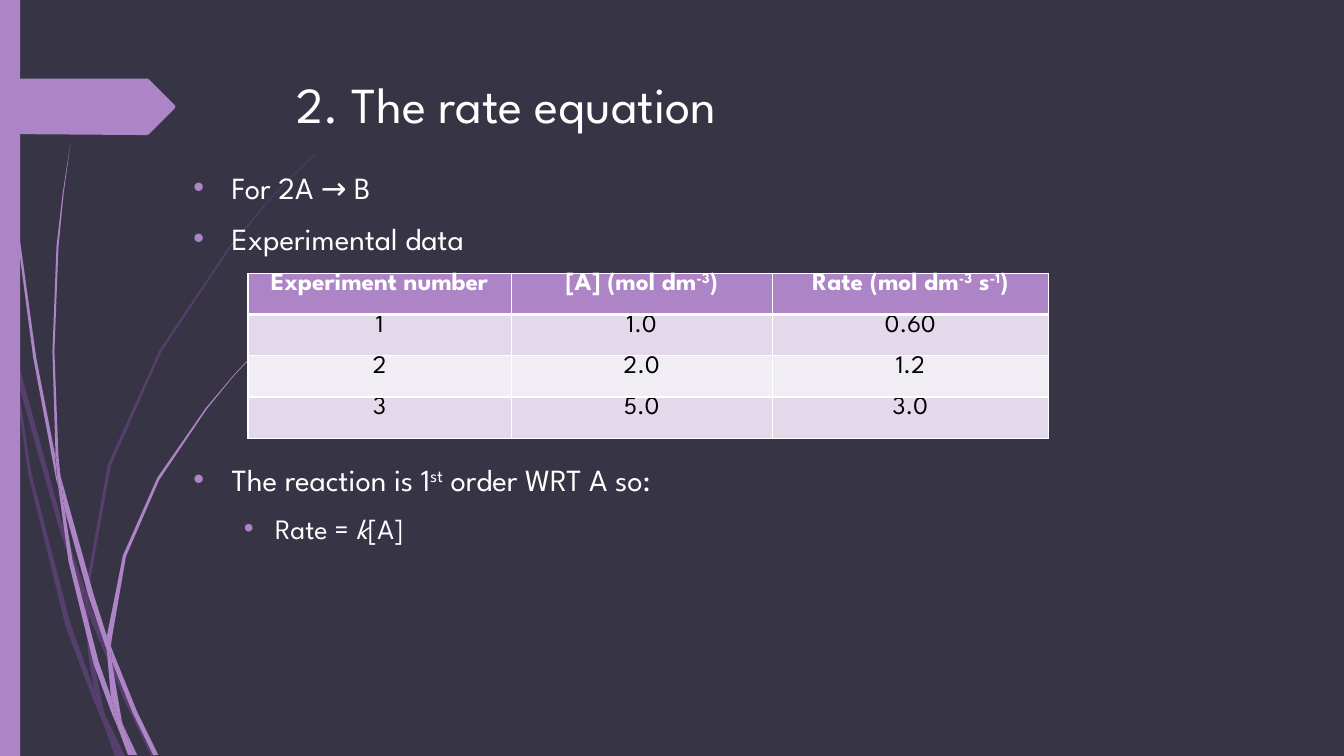
from dataclasses import dataclass

from lxml import etree
from pptx import Presentation
from pptx.dml.color import RGBColor
from pptx.enum.shapes import MSO_SHAPE
from pptx.enum.text import MSO_ANCHOR, PP_ALIGN
from pptx.oxml.ns import qn
from pptx.util import Inches, Pt

FONT = "League Spartan"
BACKGROUND = RGBColor(0x37, 0x35, 0x45)
LILAC = RGBColor(0xAD, 0x84, 0xC6)
PURPLE = RGBColor(0x87, 0x4E, 0xA9)
BAND_DARK = RGBColor(0xE3, 0xD9, 0xEA)
BAND_LIGHT = RGBColor(0xF1, 0xED, 0xF5)
WHITE = RGBColor(0xFF, 0xFF, 0xFF)
BLACK = RGBColor(0, 0, 0)

Outline = list[tuple[int, int]]


@dataclass
class Piece:
    text: str
    raised: bool = False
    italic: bool = False


@dataclass
class Bullet:
    pieces: list[Piece]
    size: int = 22
    margin: float = 0.38
    hanging: float = 0.38
    space_before: int = 10
    level: int = 0


# Outlines are in hundredths of an inch.
FAINT_STRANDS: list[Outline] = [
    [(11, 350), (9, 322), (0, 282), (0, 299), (10, 344)],
    [(58, 522), (84, 599), (85, 586), (62, 520), (14, 345), (17, 376)],
    [(92, 607), (88, 596), (88, 610), (123, 694), (150, 750), (155, 750), (127, 692)],
    [(119, 750), (124, 750), (105, 711)],
    [(93, 683), (70, 619), (31, 469), (17, 376), (11, 350), (28, 470), (65, 621),
     (92, 693), (101, 714), (99, 707)],
    [(84, 599), (87, 646), (93, 683), (96, 692), (105, 711), (103, 706), (91, 646),
     (88, 610), (88, 608)],
    [(88, 584), (110, 462), (160, 349), (229, 245), (268, 198), (290, 175), (312, 154),
     (312, 153), (289, 175), (268, 197), (228, 244), (158, 348), (107, 461), (85, 584),
     (85, 586), (88, 596)],
    [(101, 714), (114, 750), (119, 750)],
    [(88, 608), (88, 610), (88, 596), (85, 586), (84, 599)],
    [(96, 692), (93, 683), (99, 707), (101, 714), (119, 750), (105, 711)],
]
BRIGHT_STRANDS: list[Outline] = [
    [(7, 110), (17, 233), (33, 355), (56, 477), (57, 481), (55, 457), (55, 453),
     (36, 355), (19, 232), (8, 109), (5, 48), (4, 0), (3, 0), (4, 48)],
    [(88, 592), (106, 645), (106, 633), (106, 631), (93, 590), (60, 472), (64, 505)],
    [(113, 649), (110, 641), (111, 656), (132, 708), (152, 749), (157, 749), (136, 706)],
    [(110, 691), (98, 657), (72, 556), (64, 505), (57, 477), (68, 557), (93, 659),
     (111, 708), (117, 722), (116, 717)],
    [(60, 472), (58, 453), (54, 349), (58, 245), (63, 193), (70, 141), (62, 193),
     (56, 245), (52, 349), (55, 449)],
    [(133, 749), (136, 749), (122, 719)],
    [(57, 477), (64, 505), (60, 472), (55, 449), (55, 453)],
    [(111, 633), (125, 552), (158, 476), (205, 406), (231, 374), (245, 359), (261, 344),
     (260, 344), (245, 358), (231, 373), (204, 405), (156, 474), (122, 551), (106, 631),
     (110, 641)],
    [(117, 722), (127, 749), (131, 749)],
    [(106, 645), (110, 691), (116, 706), (122, 719), (121, 716), (111, 656), (109, 651)],
    [(106, 645), (109, 651), (111, 656), (110, 641), (106, 631), (106, 633)],
    [(116, 706), (110, 691), (116, 717), (117, 722), (130, 749), (133, 749), (122, 719)],
]
TITLE_TAG: Outline = [
    (173, 108), (148, 133), (146, 134), (136, 134), (0, 133), (0, 78), (146, 78),
    (148, 79), (173, 104), (174, 106),
]

TITLE = [Piece("2. The rate equation")]
BULLETS = [
    Bullet([Piece("For 2A → B")]),
    Bullet([Piece("Experimental data")]),
    # The wide gap leaves room for the table.
    Bullet([Piece("The reaction is 1"), Piece("st", raised=True), Piece(" order WRT A so:")],
           space_before=146),
    Bullet([Piece("Rate = "), Piece("k", italic=True), Piece("[A]")],
           size=20, margin=0.81, hanging=0.31, level=1),
]
RESULTS = [
    [[Piece("Experiment number")],
     [Piece("[A] (mol dm"), Piece("-3", raised=True), Piece(")")],
     [Piece("Rate (mol dm"), Piece("-3", raised=True), Piece(" s"),
      Piece("-1", raised=True), Piece(")")]],
    *[[[Piece(value)] for value in row]
      for row in (("1", "1.0", "0.60"), ("2", "2.0", "1.2"), ("3", "5.0", "3.0"))],
]
COLUMN_WIDTHS = (2.61, 2.59, 2.74)
ROW_HEIGHT = 0.41


def paint(shape, color: RGBColor) -> None:
    shape.fill.solid()
    shape.fill.fore_color.rgb = color
    shape.line.fill.background()
    shape.shadow.inherit = False


def draw_outline(slide, outline: Outline, color: RGBColor, opacity: int = 100) -> None:
    builder = slide.shapes.build_freeform(*outline[0], scale=Inches(0.01))
    builder.add_line_segments(outline[1:], close=True)
    shape = builder.convert_to_shape()
    paint(shape, color)
    if opacity < 100:
        tint = shape.fill._xPr.find(f".//{qn('a:srgbClr')}")
        etree.SubElement(tint, qn("a:alpha"), val=str(opacity * 1000))


def write_pieces(paragraph, pieces: list[Piece], size: int, color: RGBColor,
                 bold: bool = False) -> None:
    for piece in pieces:
        run = paragraph.add_run()
        run.text = piece.text
        run.font.name = FONT
        run.font.size = Pt(size)
        run.font.color.rgb = color
        run.font.bold = bold
        run.font.italic = piece.italic
        if piece.raised:
            run._r.get_or_add_rPr().set("baseline", "30000")


def add_text_frame(slide, left: float, top: float, width: float, height: float):
    box = slide.shapes.add_textbox(Inches(left), Inches(top), Inches(width), Inches(height))
    box.text_frame.word_wrap = True
    return box.text_frame


def write_bullet(paragraph, bullet: Bullet) -> None:
    paragraph.level = bullet.level
    paragraph.space_before = Pt(bullet.space_before)
    properties = paragraph._p.get_or_add_pPr()
    properties.set("marL", str(Inches(bullet.margin)))
    properties.set("indent", str(-Inches(bullet.hanging)))
    mark_color = etree.SubElement(properties, qn("a:buClr"))
    etree.SubElement(mark_color, qn("a:srgbClr"), val=str(LILAC))
    etree.SubElement(properties, qn("a:buFont"), typeface="Arial")
    etree.SubElement(properties, qn("a:buChar"), char="•")
    write_pieces(paragraph, bullet.pieces, bullet.size, WHITE)


def set_borders(cell, top: int, bottom: int) -> None:
    """Draw white borders; widths are in points and the sides are always 1."""
    properties = cell._tc.get_or_add_tcPr()
    for side, width in (("L", 1), ("R", 1), ("T", top), ("B", bottom)):
        border = etree.SubElement(properties, qn(f"a:ln{side}"), w=str(Pt(width)))
        fill = etree.SubElement(border, qn("a:solidFill"))
        etree.SubElement(fill, qn("a:srgbClr"), val=str(WHITE))


def draw_results(slide) -> None:
    table = slide.shapes.add_table(
        len(RESULTS), len(COLUMN_WIDTHS), Inches(2.46), Inches(2.71),
        Inches(sum(COLUMN_WIDTHS)), Inches(ROW_HEIGHT * len(RESULTS))).table
    for column, width in zip(table.columns, COLUMN_WIDTHS):
        column.width = Inches(width)
    for row_index, row in enumerate(RESULTS):
        table.rows[row_index].height = Inches(ROW_HEIGHT)
        is_header = row_index == 0
        band = LILAC if is_header else BAND_DARK if row_index % 2 else BAND_LIGHT
        for column_index, pieces in enumerate(row):
            cell = table.cell(row_index, column_index)
            set_borders(cell, top=3 if row_index == 1 else 1, bottom=3 if is_header else 1)
            cell.fill.solid()
            cell.fill.fore_color.rgb = band
            cell.margin_top = cell.margin_bottom = 0
            cell.vertical_anchor = MSO_ANCHOR.TOP
            paragraph = cell.text_frame.paragraphs[0]
            paragraph.alignment = PP_ALIGN.CENTER
            write_pieces(paragraph, pieces, 18, WHITE if is_header else BLACK, bold=is_header)


def main() -> None:
    deck = Presentation()
    deck.slide_width, deck.slide_height = Inches(13.33), Inches(7.5)
    slide = deck.slides.add_slide(deck.slide_layouts[6])
    slide.background.fill.solid()
    slide.background.fill.fore_color.rgb = BACKGROUND

    for strand in FAINT_STRANDS:
        draw_outline(slide, strand, PURPLE, opacity=40)
    for strand in BRIGHT_STRANDS:
        draw_outline(slide, strand, LILAC)
    side_bar = slide.shapes.add_shape(MSO_SHAPE.RECTANGLE, 0, 0, Inches(0.2), deck.slide_height)
    paint(side_bar, LILAC)
    draw_outline(slide, TITLE_TAG, LILAC)

    title_frame = add_text_frame(slide, 2.84, 0.68, 9.75, 1.4)
    write_pieces(title_frame.paragraphs[0], TITLE, 36, WHITE)
    body_frame = add_text_frame(slide, 1.82, 1.62, 10.76, 5.52)
    for index, bullet in enumerate(BULLETS):
        paragraph = body_frame.add_paragraph() if index else body_frame.paragraphs[0]
        write_bullet(paragraph, bullet)
    draw_results(slide)
    deck.save("out.pptx")


if __name__ == "__main__":
    main()
